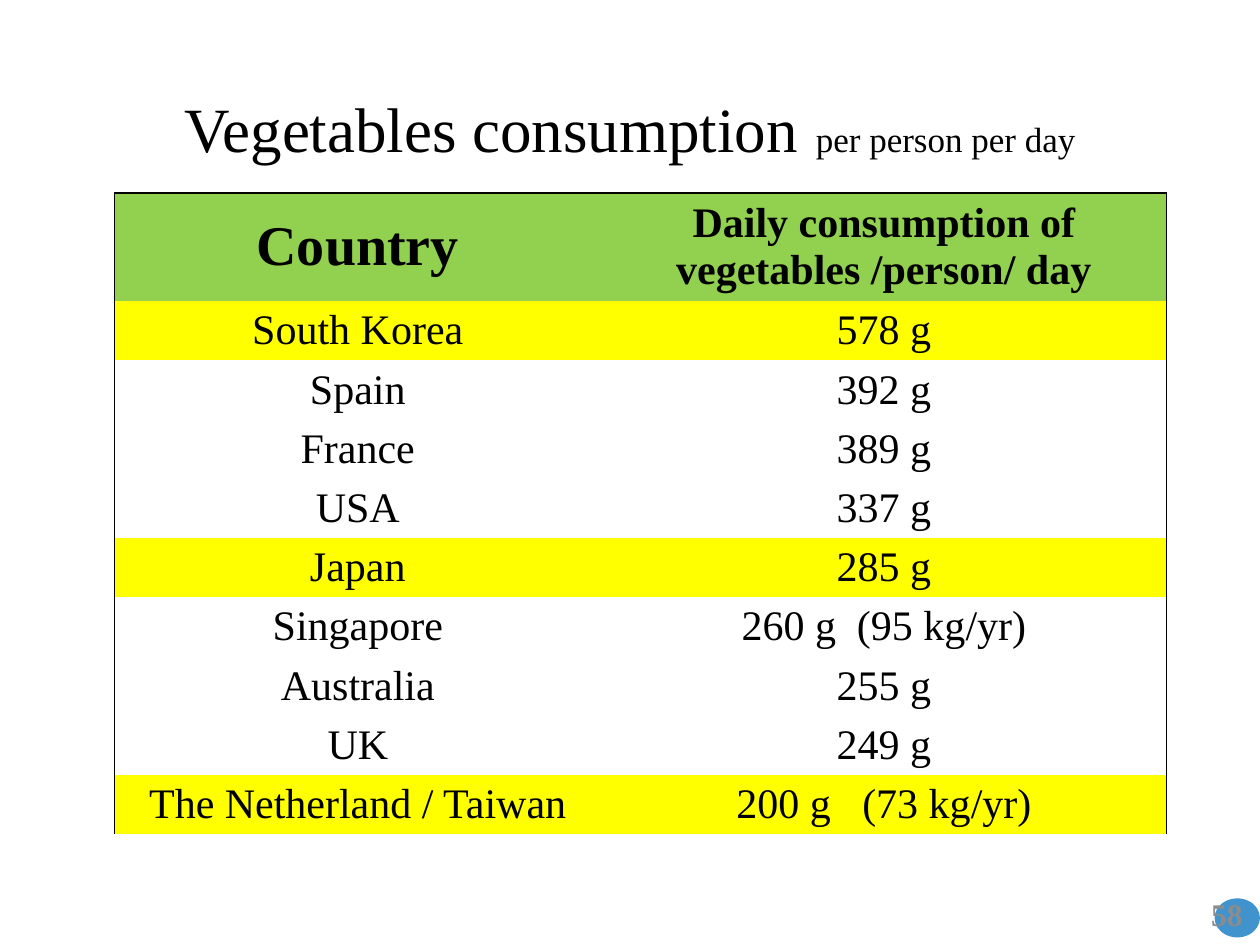
from dataclasses import dataclass

from lxml.etree import SubElement
from pptx import Presentation
from pptx.dml.color import RGBColor
from pptx.enum.shapes import MSO_SHAPE
from pptx.enum.text import MSO_ANCHOR, PP_ALIGN
from pptx.oxml.ns import qn
from pptx.util import Inches, Pt


@dataclass(frozen=True)
class Theme:
    font: str = "Times New Roman"
    ink: str = "000000"
    header: str = "92D050"
    highlight: str = "FFFF00"
    badge: str = "4093CC"
    number: str = "8C8C8C"
    title_size: int = 36
    gap_size: int = 40
    subtitle_size: int = 20
    country_size: int = 32
    body_size: int = 24
    number_size: int = 18


@dataclass(frozen=True)
class Row:
    country: str
    amount: str
    highlighted: bool = False


THEME = Theme()
COLUMNS = (3.86, 4.49)
HEADER_HEIGHT, ROW_HEIGHT = 0.83, 0.47
HEADER = Row("Country", "Daily consumption of vegetables /person/ day")
ROWS = [
    Row("South Korea", "578 g", True),
    Row("Spain", "392 g"),
    Row("France", "389 g"),
    Row("USA", "337 g"),
    Row("Japan", "285 g", True),
    Row("Singapore", "260 g  (95 kg/yr)"),
    Row("Australia", "255 g"),
    Row("UK", "249 g"),
    Row("The Netherland / Taiwan", "200 g   (73 kg/yr)", True),
]


def style(font, size: int, color: str = THEME.ink, bold: bool = False) -> None:
    font.name, font.size, font.bold = THEME.font, Pt(size), bold
    font.color.rgb = RGBColor.from_string(color)


def place(s, left: float, top: float, width: float, height: float) -> None:
    s.left, s.top, s.width, s.height = map(Inches, (left, top, width, height))


def set_borders(cell, sides: str) -> None:
    """Rule the given sides (of L, R, T, B) and clear the others."""
    tc_pr = cell._tc.get_or_add_tcPr()
    for i, side in enumerate("LRTB"):
        ln = tc_pr.makeelement(qn(f"a:ln{side}"), {"w": str(Pt(1))})
        tc_pr.insert(i, ln)
        if side in sides:
            fill = SubElement(ln, qn("a:solidFill"))
            SubElement(fill, qn("a:srgbClr"), val=THEME.ink)
        else:
            SubElement(ln, qn("a:noFill"))


def fill_cell(cell, text: str, size: int, color: str | None, bold: bool, sides: str) -> None:
    cell.margin_top = cell.margin_bottom = Inches(0.03)
    cell.vertical_anchor = MSO_ANCHOR.MIDDLE
    p = cell.text_frame.paragraphs[0]
    p.text, p.alignment = text, PP_ALIGN.CENTER
    style(p.font, size, bold=bold)
    if color:
        cell.fill.solid()
        cell.fill.fore_color.rgb = RGBColor.from_string(color)
    else:
        cell.fill.background()
    set_borders(cell, sides)


def add_consumption_table(slide) -> None:
    height = HEADER_HEIGHT + ROW_HEIGHT * len(ROWS)
    frame = slide.shapes.add_table(len(ROWS) + 1, len(COLUMNS), Inches(0.91), Inches(1.53),
                                   Inches(sum(COLUMNS)), Inches(height))
    table = frame.table
    for column, width in zip(table.columns, COLUMNS):
        column.width = Inches(width)
    for i, row in enumerate([HEADER, *ROWS]):
        head = i == 0
        table.rows[i].height = Inches(HEADER_HEIGHT if head else ROW_HEIGHT)
        color = THEME.header if head else THEME.highlight if row.highlighted else None
        top = "T" if head else ""
        country_size = THEME.country_size if head else THEME.body_size
        fill_cell(table.cell(i, 0), row.country, country_size, color, head, "L" + top)
        fill_cell(table.cell(i, 1), row.amount, THEME.body_size, color, head, "R" + top)


def add_title(slide) -> None:
    s = slide.shapes.title
    place(s, 0.5, 0.3, 9, 1.25)
    tf = s.text_frame
    tf.vertical_anchor, tf.margin_top = MSO_ANCHOR.MIDDLE, Inches(0.17)
    p = tf.paragraphs[0]
    p.alignment = PP_ALIGN.CENTER
    for text, size in (("Vegetables consumption", THEME.title_size), (" ", THEME.gap_size),
                       ("per person per day", THEME.subtitle_size)):
        r = p.add_run()
        r.text = text
        style(r.font, size)


def add_page_number(slide, number: int) -> None:
    badge = slide.shapes.add_shape(MSO_SHAPE.OVAL, Inches(9.64), Inches(7.13),
                                   Inches(0.36), Inches(0.31))
    badge.shadow.inherit = False
    badge.fill.solid()
    badge.fill.fore_color.rgb = RGBColor.from_string(THEME.badge)
    badge.line.fill.background()

    s = slide.shapes.add_textbox(Inches(7.63), Inches(7.05), Inches(2.33), Inches(0.4))
    tf = s.text_frame
    tf.word_wrap, tf.vertical_anchor = True, MSO_ANCHOR.MIDDLE
    p = tf.paragraphs[0]
    p.text, p.alignment = str(number), PP_ALIGN.RIGHT
    style(p.font, THEME.number_size, THEME.number, bold=True)


def main() -> None:
    prs = Presentation()
    prs.slide_width, prs.slide_height = Inches(10), Inches(7.5)
    slide = prs.slides.add_slide(prs.slide_layouts.get_by_name("Title Only"))
    add_title(slide)
    add_page_number(slide, 58)
    add_consumption_table(slide)
    prs.save("out.pptx")


if __name__ == "__main__":
    main()
